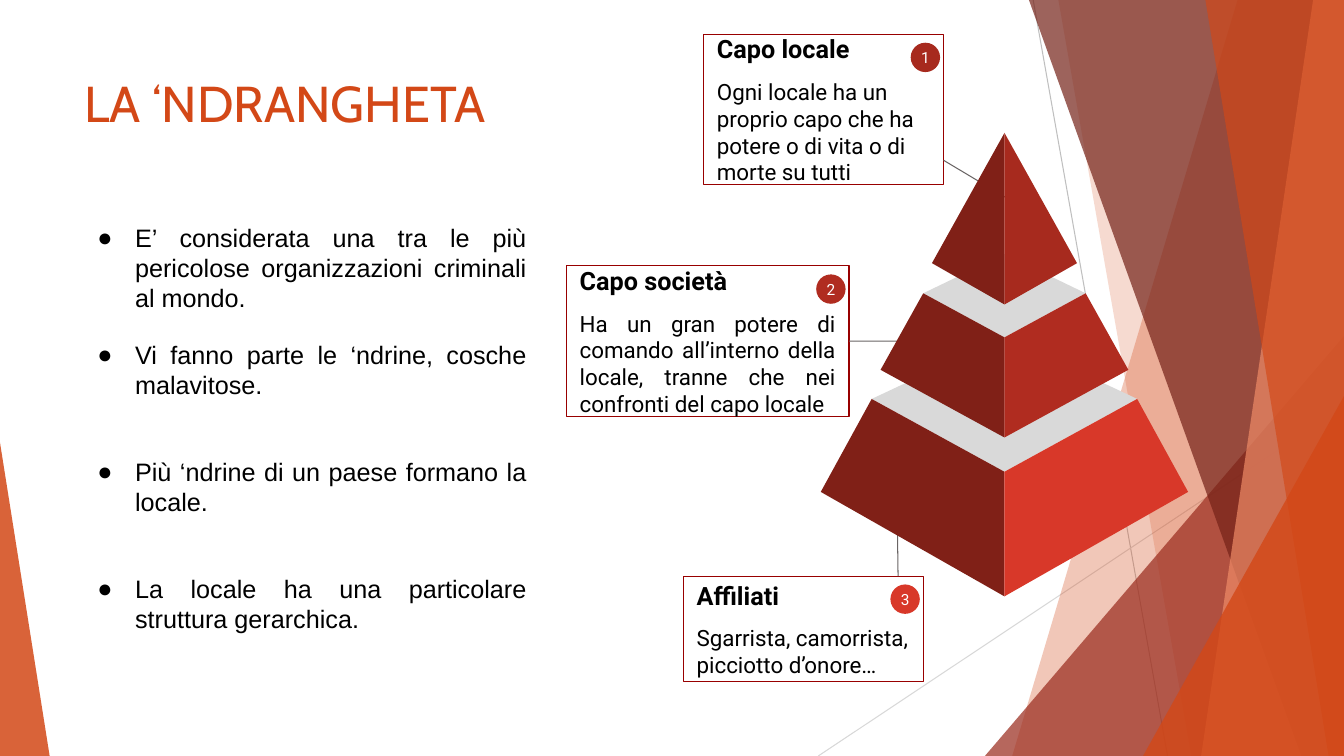
from dataclasses import dataclass

from lxml import etree
from pptx import Presentation
from pptx.dml.color import RGBColor
from pptx.enum.shapes import MSO_CONNECTOR, MSO_SHAPE
from pptx.enum.text import MSO_ANCHOR, MSO_AUTO_SIZE, PP_ALIGN
from pptx.oxml.ns import qn
from pptx.util import Pt

STRAIGHT = MSO_CONNECTOR.STRAIGHT
RECTANGLE, OVAL, TRIANGLE = MSO_SHAPE.RECTANGLE, MSO_SHAPE.OVAL, MSO_SHAPE.ISOSCELES_TRIANGLE
TOP, MIDDLE = MSO_ANCHOR.TOP, MSO_ANCHOR.MIDDLE
LEFT, CENTER, JUSTIFY = PP_ALIGN.LEFT, PP_ALIGN.CENTER, PP_ALIGN.JUSTIFY
NO_AUTOFIT = MSO_AUTO_SIZE.NONE

COLOURS = {
    "orange": "D34817", "peach": "EF8B67", "rust": "9B2D1F", "wine": "742117",
    "shade": "802017", "top": "A72A1E", "middle": "B02C20", "base": "D83829",
    "lid": "D9D9D9", "frame": "980000", "leader": "696464",
    "grey": "BFBFBF", "pale": "D8D8D8", "black": "000000", "white": "FFFFFF",
}

Point = tuple[float, float]


@dataclass
class Facet:
    points: list[Point]
    colour: str
    opacity: int = 100


@dataclass
class Wedge:
    left: float
    top: float
    width: float
    height: float
    apex: float
    colour: str
    opacity: int


@dataclass
class Callout:
    number: str
    title: str
    text: str
    left: float
    top: float
    width: float
    height: float
    colour: str
    align: PP_ALIGN
    leader: tuple[Point, Point]
    joined: bool = False


@dataclass
class Tier:
    lid_y: float
    rim_half: float
    rim_y: float
    seam_y: float
    base_half: float
    base_y: float
    foot_y: float
    colour: str


@dataclass
class Item:
    text: str
    lines: int


BACKDROP = [
    Facet([(884, 0), (960, 0), (960, 540), (723, 540)], "orange", 30),
    Facet([(756, 0), (960, 0), (960, 540), (851, 540)], "orange", 20),
    Wedge(703.5, 240, 256.5, 300, 1, "rust", 72),
    Facet([(735, 0), (960, 0), (960, 540), (929.5, 540)], "wine", 70),
    Facet([(938, 0), (960, 0), (960, 540), (858, 540)], "peach", 70),
    Facet([(861, 0), (960, 0), (960, 540), (949, 540)], "orange", 65),
    Wedge(816.5, 283, 143.5, 257, 1, "orange", 80),
    Wedge(0, 316, 35.5, 224, 0, "orange", 85),
]
ITEMS = [
    Item("E’ considerata una tra le più pericolose organizzazioni criminali al mondo.", 3),
    Item("Vi fanno parte le ‘ndrine, cosche malavitose.", 2),
    Item("Più ‘ndrine di un paese formano la locale.", 2),
    Item("La locale ha una particolare struttura gerarchica.", 2),
]
ITEM_PITCH = 83.6
ITEM_LINE = 21.4
CALLOUTS = [
    Callout("3", "Affiliati", "Sgarrista, camorrista, picciotto d’onore…",
            488, 411.5, 171.5, 75.5, "base", LEFT, ((641.5, 411.5), (640.5, 336))),
    Callout("2", "Capo società",
            "Ha un gran potere di comando all’interno della locale, tranne che nei "
            "confronti del capo locale",
            404.5, 190, 202, 107.5, "middle", JUSTIFY, ((606.5, 244), (682, 243.5)), True),
    Callout("1", "Capo locale",
            "Ogni locale ha un proprio capo che ha potere o di vita o di morte su tutti",
            502.5, 24.5, 171.5, 107.5, "top", LEFT, ((674, 114.5), (720, 142))),
]
AXIS = 717.5
TIERS = [
    Tier(240.5, 94.8, 285, 337, 131.2, 351.4, 426, "base"),
    Tier(181.5, 58, 209.5, 241, 88.5, 264.2, 312.5, "middle"),
    Tier(95, 0, 95, 95, 51.8, 188, 217.5, "top"),
]


def rgb(colour: str) -> RGBColor:
    return RGBColor.from_string(COLOURS[colour])


def paint(shape, colour: str, opacity: int = 100) -> None:
    shape.shadow.inherit = False
    shape.line.fill.background()
    shape.fill.solid()
    shape.fill.fore_color.rgb = rgb(colour)
    if opacity < 100:
        tint = shape.fill._xPr.find(qn("a:solidFill"))[0]
        etree.SubElement(tint, qn("a:alpha"), val=str(opacity * 1000))


def draw_facet(slide, facet: Facet) -> None:
    corners = [(Pt(x), Pt(y)) for x, y in facet.points]
    builder = slide.shapes.build_freeform(*corners[0])
    builder.add_line_segments(corners[1:], close=True)
    paint(builder.convert_to_shape(), facet.colour, facet.opacity)


def draw_wedge(slide, wedge: Wedge) -> None:
    shape = slide.shapes.add_shape(
        TRIANGLE, Pt(wedge.left), Pt(wedge.top), Pt(wedge.width), Pt(wedge.height))
    shape.adjustments[0] = wedge.apex
    paint(shape, wedge.colour, wedge.opacity)


def draw_line(slide, start: Point, end: Point, colour: str):
    line = slide.shapes.add_connector(STRAIGHT, *map(Pt, start + end))
    line.line.color.rgb = rgb(colour)
    line.line.width = Pt(0.75)
    etree.SubElement(line._element.spPr, qn("a:effectLst"))
    return line


def set_frame(frame, inset_x: float, inset_y: float, anchor: MSO_ANCHOR) -> None:
    frame.word_wrap = True
    frame.auto_size = NO_AUTOFIT
    frame.vertical_anchor = anchor
    frame.margin_left = frame.margin_right = Pt(inset_x)
    frame.margin_top = frame.margin_bottom = Pt(inset_y)


def write(para, text: str, font: str, size: float, colour: str,
          align: PP_ALIGN, bold: bool = False) -> None:
    para.alignment = align
    span = para.add_run()
    span.text = text
    span.font.name = font
    span.font.size = Pt(size)
    span.font.bold = bold
    span.font.color.rgb = rgb(colour)


def place(shape, left: float, top: float, width: float, height: float) -> None:
    shape.left, shape.top = Pt(left), Pt(top)
    shape.width, shape.height = Pt(width), Pt(height)


def add_bullet(para) -> None:
    properties = para._p.get_or_add_pPr()
    properties.set("marL", str(Pt(36)))
    properties.set("indent", str(Pt(-27)))
    tint = etree.SubElement(properties, qn("a:buClr"))
    etree.SubElement(tint, qn("a:srgbClr"), val=COLOURS["black"])
    etree.SubElement(properties, qn("a:buChar"), char="●")


def fill_list(body) -> None:
    place(body, 53.3, 152, 330, 344)
    frame = body.text_frame
    set_frame(frame, 7.2, 7.2, TOP)
    for index, item in enumerate(ITEMS):
        para = frame.add_paragraph() if index else frame.paragraphs[0]
        para.line_spacing = Pt(ITEM_LINE)
        para.space_before = Pt(0)
        para.space_after = Pt(ITEM_PITCH - item.lines * ITEM_LINE)
        add_bullet(para)
        write(para, item.text, "Arial", 18, "black", JUSTIFY)


def draw_callout(slide, callout: Callout) -> None:
    box = slide.shapes.add_shape(
        RECTANGLE, Pt(callout.left), Pt(callout.top), Pt(callout.width), Pt(callout.height))
    box.shadow.inherit = False
    box.fill.background()
    box.line.color.rgb = rgb("frame")
    box.line.width = Pt(0.75)
    frame = box.text_frame
    set_frame(frame, 9.6, 9.6, MIDDLE)
    write(frame.paragraphs[0], callout.title, "Roboto", 18, "black", LEFT, True)
    para = frame.add_paragraph()
    para.space_before = Pt(10)
    write(para, callout.text, "Roboto", 16, "black", callout.align)
    leader = draw_line(slide, *callout.leader, "leader")
    if callout.joined:
        leader.begin_connect(box, 3)
    badge = slide.shapes.add_shape(
        OVAL, Pt(callout.left + callout.width - 23.5), Pt(callout.top + 6), Pt(21), Pt(21))
    paint(badge, callout.colour)
    set_frame(badge.text_frame, 0, 0, MIDDLE)
    write(badge.text_frame.paragraphs[0], callout.number, "Roboto", 11, "white", CENTER)


def draw_tier(slide, tier: Tier) -> None:
    if tier.rim_half:
        draw_facet(slide, Facet([
            (AXIS - tier.rim_half, tier.rim_y), (AXIS, tier.seam_y),
            (AXIS + tier.rim_half, tier.rim_y), (AXIS, tier.lid_y)], "lid"))
    for side, colour in ((-1, "shade"), (1, tier.colour)):
        outline = [(AXIS + side * tier.rim_half, tier.rim_y), (AXIS, tier.seam_y),
                   (AXIS, tier.foot_y), (AXIS + side * tier.base_half, tier.base_y)]
        draw_facet(slide, Facet(list(dict.fromkeys(outline)), colour))


def main() -> None:
    deck = Presentation()
    deck.slide_width, deck.slide_height = Pt(960), Pt(540)
    page = deck.slides.add_slide(deck.slide_layouts[1])
    draw_line(page, (738, 0), (834, 540), "grey")
    draw_line(page, (960, 290), (584.5, 540), "pale")
    for part in BACKDROP:
        if isinstance(part, Facet):
            draw_facet(page, part)
        else:
            draw_wedge(page, part)
    title = page.shapes.title
    place(title, 53.3, 48, 435, 104)
    set_frame(title.text_frame, 7.2, 3.6, TOP)
    write(title.text_frame.paragraphs[0], "LA ‘NDRANGHETA", "Cabin", 36, "orange", LEFT)
    fill_list(page.placeholders[1])
    for callout in CALLOUTS:
        draw_callout(page, callout)
    for tier in TIERS:
        draw_tier(page, tier)
    deck.save("out.pptx")


if __name__ == "__main__":
    main()
